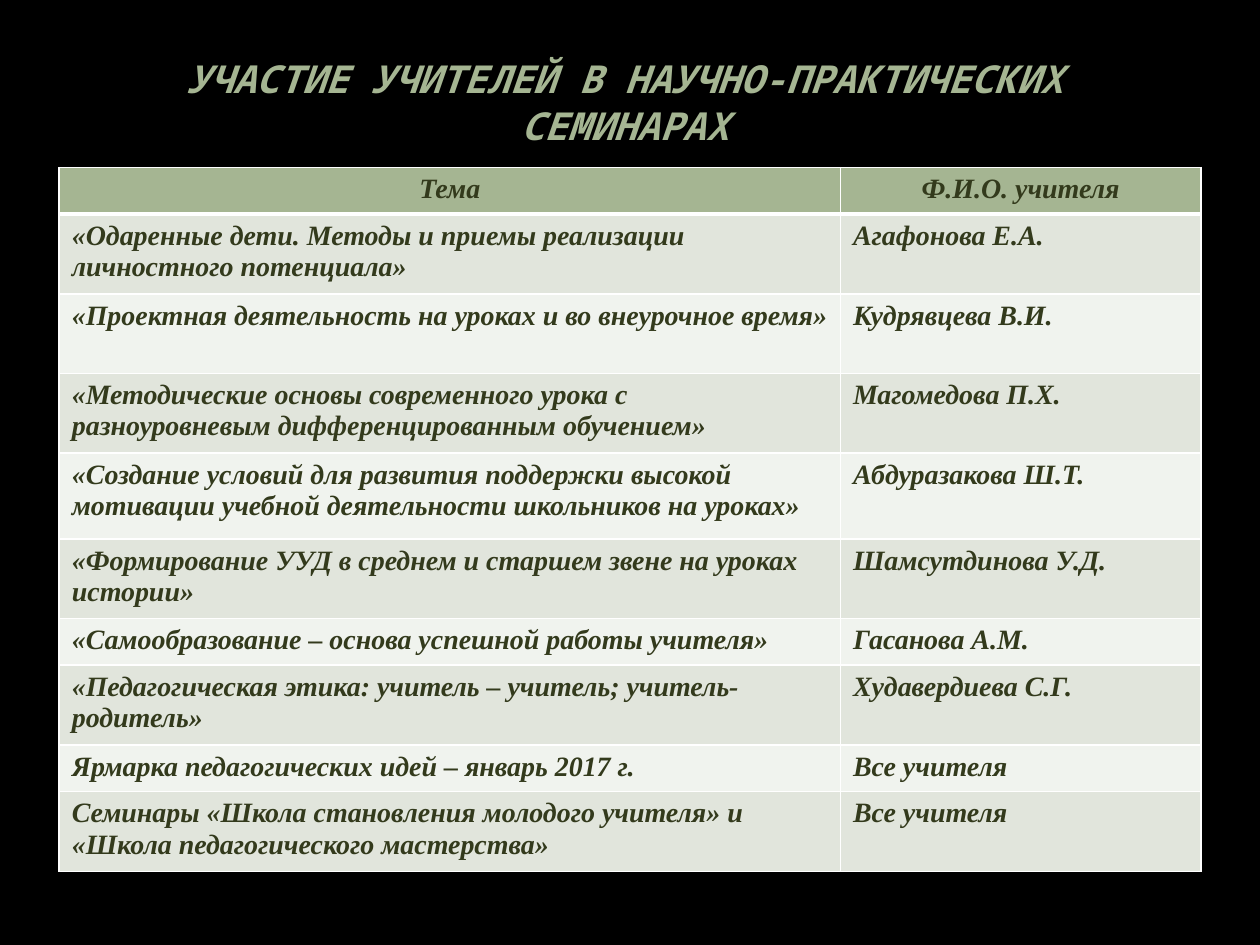
from dataclasses import dataclass

from lxml import etree
from pptx import Presentation
from pptx.dml.color import RGBColor
from pptx.enum.text import MSO_ANCHOR, MSO_AUTO_SIZE, PP_ALIGN
from pptx.oxml.ns import qn
from pptx.util import Inches, Pt

CENTER, LEFT = PP_ALIGN.CENTER, PP_ALIGN.LEFT
TOP = MSO_ANCHOR.TOP
FIT_SHAPE = MSO_AUTO_SIZE.SHAPE_TO_FIT_TEXT
TITLE_ONLY = 5


@dataclass(frozen=True)
class Theme:
    background: str = "000000"
    accent: str = "A5B592"
    text: str = "333A1C"
    bands: tuple = ("E1E5DC", "F0F3EE")
    border: str = "FFFFFF"
    title_font: str = "Noto Sans Mono"
    body_font: str = "Times New Roman"
    title_size: int = 22
    body_size: int = 16


TITLE = "УЧАСТИЕ УЧИТЕЛЕЙ В НАУЧНО-ПРАКТИЧЕСКИХ СЕМИНАРАХ"
HEADER = ("Тема", "Ф.И.О. учителя")
# Topic, teacher, row height in inches
SEMINARS = [
    ("«Одаренные дети. Методы и приемы реализации личностного потенциала»", "Агафонова Е.А.", 0.63),
    ("«Проектная деятельность на уроках и во внеурочное время»", "Кудрявцева В.И.", 0.63),
    ("«Методические основы современного урока с разноуровневым дифференцированным обучением»",
     "Магомедова П.Х.", 0.63),
    ("«Создание условий для развития поддержки высокой мотивации учебной деятельности "
     "школьников на уроках»", "Абдуразакова Ш.Т.", 0.68),
    ("«Формирование УУД в среднем и старшем звене на уроках истории»", "Шамсутдинова У.Д.", 0.63),
    ("«Самообразование – основа успешной работы учителя»", "Гасанова А.М.", 0.37),
    ("«Педагогическая этика: учитель – учитель; учитель-родитель»", "Худавердиева С.Г.", 0.63),
    ("Ярмарка педагогических идей – январь 2017 г.", "Все учителя", 0.37),
    ("Семинары «Школа становления молодого учителя» и «Школа педагогического мастерства»",
     "Все учителя", 0.63),
]
COLUMNS = (6.2, 2.86)
HEADER_HEIGHT = 0.37


class SlideBuilder:
    def __init__(self, slide, theme):
        self.s = slide
        self.theme = theme

    def background(self):
        fill = self.s.background.fill
        fill.solid()
        fill.fore_color.rgb = RGBColor.from_string(self.theme.background)

    def set_text(self, tf, text, font, size, color, align):
        tf.text = text
        p = tf.paragraphs[0]
        p.alignment = align
        f = p.runs[0].font
        f.name, f.size = font, Pt(size)
        f.bold = f.italic = True
        f.color.rgb = RGBColor.from_string(color)

    def title(self, text, left, top, width, height):
        t = self.theme
        sp = self.s.shapes.title
        sp.left, sp.top = Inches(left), Inches(top)
        sp.width, sp.height = Inches(width), Inches(height)
        tf = sp.text_frame
        tf.word_wrap = True
        tf.auto_size = FIT_SHAPE
        tf.vertical_anchor = TOP
        self.set_text(tf, text, t.title_font, t.title_size, t.accent, CENTER)

    def borders(self, cell, bottom):
        tc_pr = cell._tc.get_or_add_tcPr()
        for side, width in (("L", 1), ("R", 1), ("T", 1), ("B", bottom)):
            ln = etree.SubElement(tc_pr, qn(f"a:ln{side}"), w=str(Pt(width)))
            fill = etree.SubElement(ln, qn("a:solidFill"))
            etree.SubElement(fill, qn("a:srgbClr"), val=self.theme.border)

    def cell(self, cell, text, fill, align, bottom):
        t = self.theme
        self.borders(cell, bottom)
        cell.fill.solid()
        cell.fill.fore_color.rgb = RGBColor.from_string(fill)
        self.set_text(cell.text_frame, text, t.body_font, t.body_size, t.text, align)

    def table(self, header, rows, columns, header_height, left, top):
        heights = [header_height] + [row[-1] for row in rows]
        table = self.s.shapes.add_table(
            len(heights), len(columns), Inches(left), Inches(top),
            Inches(sum(columns)), Inches(sum(heights))).table
        for column, width in zip(table.columns, columns):
            column.width = Inches(width)
        for row, height in zip(table.rows, heights):
            row.height = Inches(height)
        # Header row
        for c, text in enumerate(header):
            self.cell(table.cell(0, c), text, self.theme.accent, CENTER, bottom=3)
        # Banded body rows
        for r, (topic, teacher, _) in enumerate(rows, start=1):
            band = self.theme.bands[(r - 1) % 2]
            for c, text in enumerate((topic, teacher)):
                self.cell(table.cell(r, c), text, band, LEFT, bottom=1)


def main():
    prs = Presentation()
    prs.slide_width, prs.slide_height = Inches(10), Inches(7.5)
    slide = prs.slides.add_slide(prs.slide_layouts[TITLE_ONLY])
    builder = SlideBuilder(slide, Theme())
    builder.background()
    builder.title(TITLE, 0.78, 0.39, 8.36, 0.84)
    builder.table(HEADER, SEMINARS, COLUMNS, HEADER_HEIGHT, 0.47, 1.33)
    prs.save("out.pptx")


if __name__ == "__main__":
    main()
